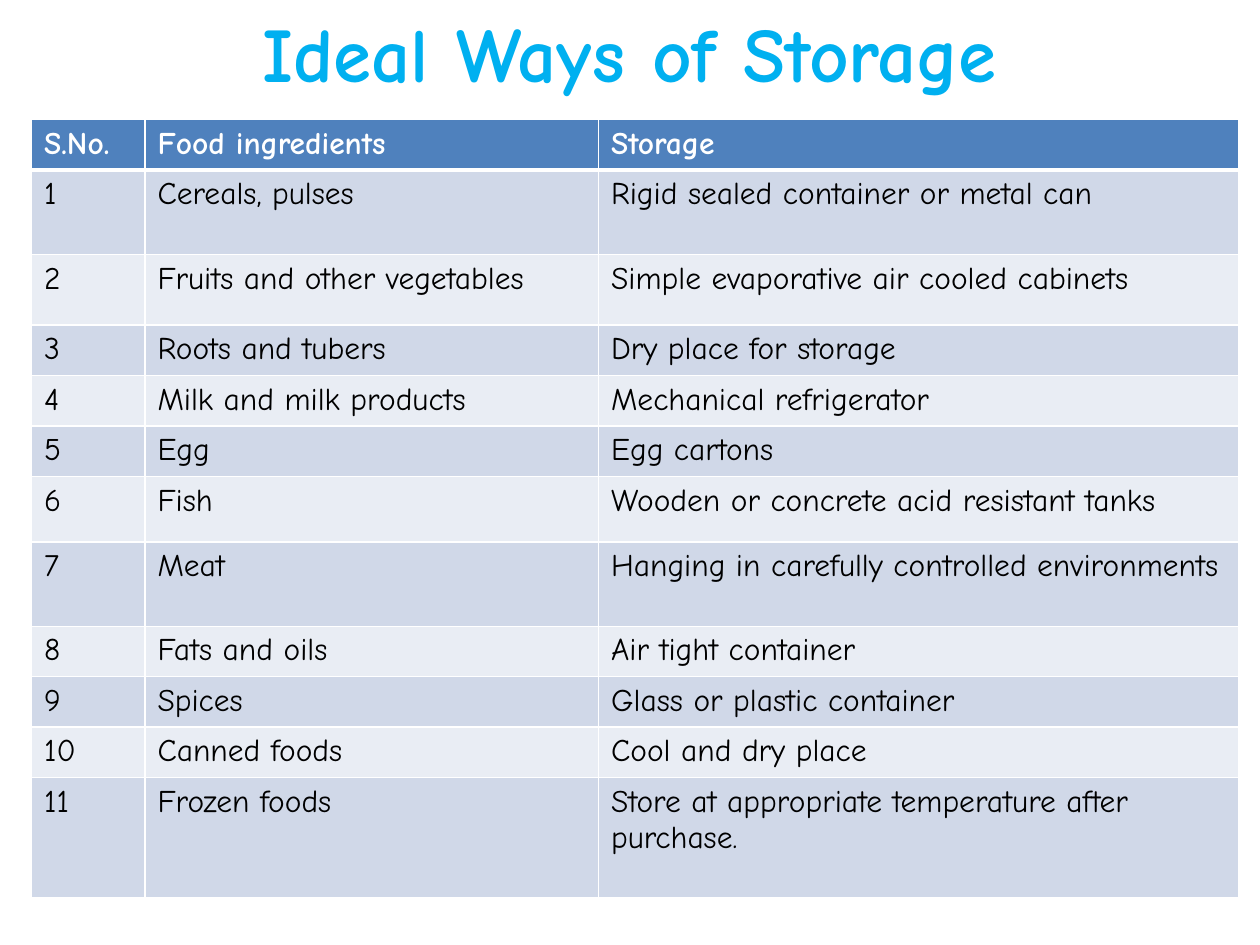
from dataclasses import dataclass

from lxml import etree
from pptx import Presentation, util as u
from pptx.dml.color import RGBColor
from pptx.enum import text
from pptx.oxml import ns


@dataclass(frozen=True)
class Theme:
    face: str = "Comic Neue"
    title: str = "00B0F0"
    head: str = "4F81BD"
    odd: str = "D0D8E8"
    even: str = "E9EDF4"
    ink: str = "000000"
    white: str = "FFFFFF"
    big: int = 44
    body: int = 18
    thin: int = 1
    thick: int = 3


@dataclass(frozen=True)
class Food:
    name: str
    storage: str
    height: float = 0.38


THEME = Theme()
WIDE, HIGH = 10, 7.5
COLS = (0.9, 3.6, 5.08)
HEAD = Food("Food ingredients", "Storage")
FOODS = (
    Food("Cereals, pulses", "Rigid sealed container or metal can", 0.67),
    Food("Fruits and other vegetables", "Simple evaporative air cooled cabinets", 0.56),
    Food("Roots and tubers", "Dry place for storage"),
    Food("Milk and milk products", "Mechanical refrigerator"),
    Food("Egg", "Egg cartons"),
    Food("Fish", "Wooden or concrete acid resistant tanks", 0.52),
    Food("Meat", "Hanging in carefully controlled environments", 0.67),
    Food("Fats and oils", "Air tight container"),
    Food("Spices", "Glass or plastic container"),
    Food("Canned foods", "Cool and dry place"),
    Food("Frozen foods", "Store at appropriate temperature after purchase.", 0.95),
)


def write(frame, words: str, size: int, color: str, bold: bool):
    """Fill a text frame with one styled paragraph."""
    para = frame.paragraphs[0]
    para.text = words
    font = para.font
    font.name, font.size, font.bold = THEME.face, u.Pt(size), bold
    font.color.rgb = RGBColor.from_string(color)
    return para


def border(cell, base: int) -> None:
    """Draw white lines round a cell; they must precede its fill."""
    props = cell._tc.get_or_add_tcPr()
    widths = {"lnL": THEME.thin, "lnR": THEME.thin, "lnT": THEME.thin, "lnB": base}
    for place, (side, width) in enumerate(widths.items()):
        line = etree.Element(ns.qn("a:" + side), w=str(u.Pt(width)))
        fill = etree.SubElement(line, ns.qn("a:solidFill"))
        etree.SubElement(fill, ns.qn("a:srgbClr"), val=THEME.white)
        props.insert(place, line)


def add_title(slide, words: str) -> None:
    box = slide.shapes.add_textbox(
        u.Inches(WIDE * 0.05), 0, u.Inches(WIDE * 0.9), u.Inches(HIGH * 0.11))
    frame = box.text_frame
    frame.word_wrap = True
    frame.vertical_anchor = text.MSO_ANCHOR.MIDDLE
    para = write(frame, words, THEME.big, THEME.title, True)
    para.alignment = text.PP_ALIGN.CENTER


def add_foods(slide) -> None:
    rows = (HEAD, *FOODS)
    table = slide.shapes.add_table(
        len(rows), len(COLS), u.Inches(0.25), u.Inches(0.95),
        u.Inches(sum(COLS)), u.Inches(sum(row.height for row in rows))).table
    for col, width in zip(table.columns, COLS):
        col.width = u.Inches(width)
    for num, row in enumerate(rows):
        table.rows[num].height = u.Inches(row.height)
        top = num == 0
        back = THEME.head if top else THEME.odd if num % 2 else THEME.even
        color = THEME.white if top else THEME.ink
        label = "S.No." if top else str(num)
        for cell, words in zip(table.rows[num].cells, (label, row.name, row.storage)):
            cell.fill.solid()
            cell.fill.fore_color.rgb = RGBColor.from_string(back)
            # The line below the heading is shared with the first food row
            border(cell, THEME.thick if top else THEME.thin)
            write(cell.text_frame, words, THEME.body, color, top)


def main() -> None:
    deck = Presentation()
    deck.slide_width, deck.slide_height = u.Inches(WIDE), u.Inches(HIGH)
    slide = deck.slides.add_slide(deck.slide_layouts[6])
    # Heading
    add_title(slide, "Ideal Ways of Storage")
    # Storage table
    add_foods(slide)
    deck.save("out.pptx")


if __name__ == "__main__":
    main()
